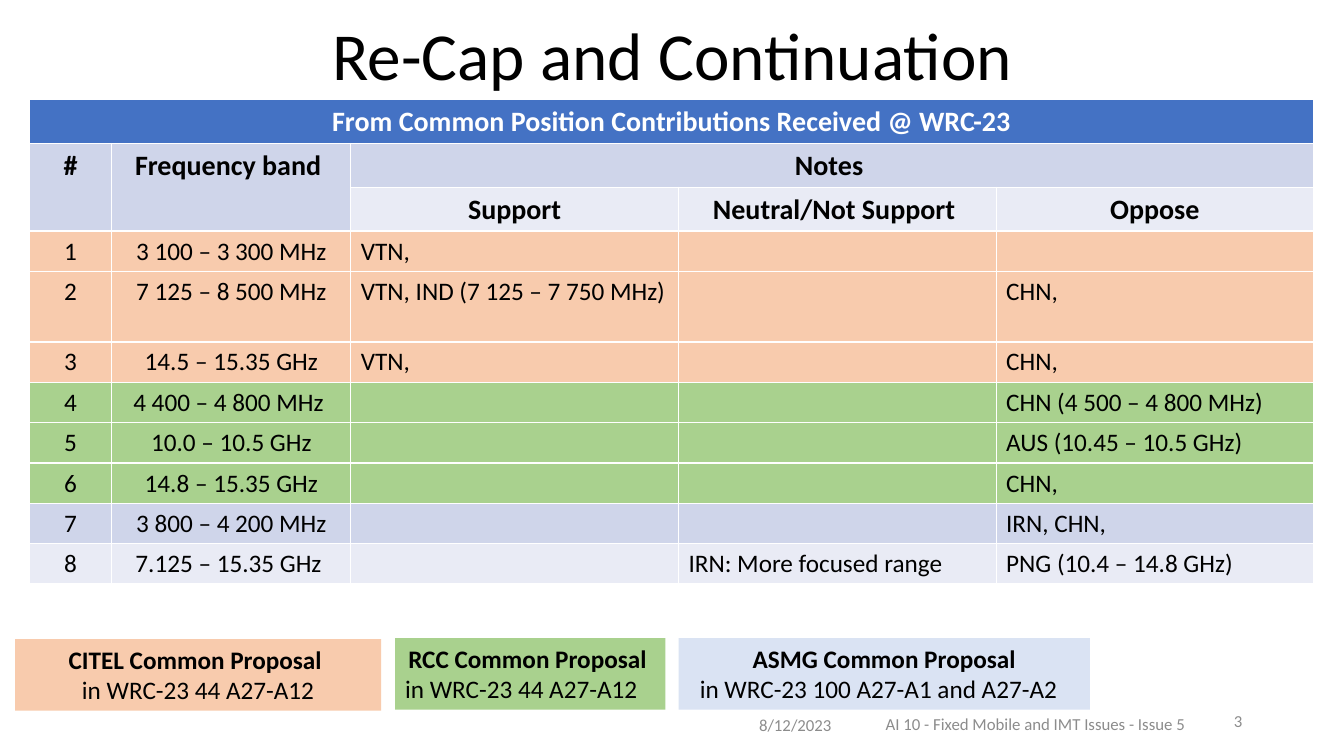
from pptx import Presentation
from pptx.dml.color import RGBColor
from pptx.enum.shapes import MSO_SHAPE
from pptx.enum.text import MSO_ANCHOR, MSO_AUTO_SIZE, PP_ALIGN
from pptx.util import Emu, Pt

RECT = MSO_SHAPE.RECTANGLE
TOP, MIDDLE = MSO_ANCHOR.TOP, MSO_ANCHOR.MIDDLE
LEFT, CENTER, RIGHT = PP_ALIGN.LEFT, PP_ALIGN.CENTER, PP_ALIGN.RIGHT
NO_FIT = MSO_AUTO_SIZE.NONE

BLACK = RGBColor(0x00, 0x00, 0x00)
WHITE = RGBColor(0xFF, 0xFF, 0xFF)
GRAY = RGBColor(0x8C, 0x8C, 0x8C)
BLUE = RGBColor(0x44, 0x72, 0xC4)
BAND_DARK = RGBColor(0xCF, 0xD5, 0xEA)
BAND_LIGHT = RGBColor(0xE9, 0xEB, 0xF5)
ORANGE = RGBColor(0xF8, 0xCB, 0xAD)
GREEN = RGBColor(0xA9, 0xD1, 0x8E)
PALE_BLUE = RGBColor(0xDA, 0xE3, 0xF3)

FONT = "Calibri"
COL_WIDTHS = [82, 237, 325, 315, 315]
ROW_HEIGHTS = [43, 43, 43, 40, 70] + [40] * 6

HEADERS = [
    (BLUE, ["From Common Position Contributions Received @ WRC-23", "", "", "", ""]),
    (BAND_DARK, ["#", "Frequency band ", "Notes ", "", ""]),
    (BAND_LIGHT, ["", "", "Support", "Neutral/Not Support ", "Oppose"]),
]
# Fill, frequency band, support, neutral, oppose
BANDS = [
    (ORANGE, "3 100 – 3 300 MHz", "VTN,", "", ""),
    (ORANGE, "7 125 – 8 500 MHz", "VTN, IND (7 125 – 7 750 MHz)", "", "CHN,"),
    (ORANGE, "14.5 – 15.35 GHz", "VTN,", "", "CHN,"),
    (GREEN, "4 400 – 4 800 MHz ", "", "", "CHN (4 500 – 4 800 MHz)"),
    (GREEN, "10.0 – 10.5 GHz", "", "", "AUS (10.45 – 10.5 GHz)"),
    (GREEN, "14.8 – 15.35 GHz", "", "", "CHN,"),
    (BAND_DARK, "3 800 – 4 200 MHz", "", "", "IRN, CHN,"),
    (BAND_LIGHT, "7.125 – 15.35 GHz ", "", "IRN: More focused range", "PNG (10.4 – 14.8 GHz)"),
]
# Left, top, width, fill, heading, source, source alignment
PROPOSALS = [
    (15, 634, 363, ORANGE, "CITEL Common Proposal ", "in WRC-23 44 A27-A12", CENTER),
    (392, 633, 268, GREEN, "RCC Common Proposal ", "in WRC-23 44 A27-A12", LEFT),
    (673, 633, 408, PALE_BLUE, "ASMG Common Proposal",
     "in WRC-23 100 A27-A1 and A27-A2  ", CENTER),
]
# Left, top, width, text, alignment
FOOTERS = [
    (743, 699, 300, "8/12/2023", LEFT),
    (804, 698, 450, "AI 10 - Fixed Mobile and IMT Issues - Issue 5 ", CENTER),
    (942, 695, 300, "3", RIGHT),
]


def px(n):
    """Convert px, 100 to the inch, to EMU."""
    return Emu(n * 9144)


def format_paragraph(p, text, size, color, align, bold=False):
    p.text = text
    p.alignment = align
    p.font.name = FONT
    p.font.size = Pt(size)
    p.font.bold = bold
    p.font.color.rgb = color


def set_title(s, text):
    title = s.shapes.title
    title.left, title.top, title.width, title.height = px(15), px(8), px(1304), px(91)
    tf = title.text_frame
    tf.auto_size = NO_FIT
    tf.vertical_anchor = TOP
    format_paragraph(tf.paragraphs[0], text, 48, BLACK, CENTER)


def fill_cell(cell, text, fill, size, color, align, bold):
    cell.fill.solid()
    cell.fill.fore_color.rgb = fill
    format_paragraph(cell.text_frame.paragraphs[0], text, size, color, align, bold)


def add_band_table(s):
    frame = s.shapes.add_table(len(ROW_HEIGHTS), len(COL_WIDTHS), px(29), px(99),
                               px(sum(COL_WIDTHS)), px(sum(ROW_HEIGHTS)))
    table = frame.table
    table.horz_banding = False
    for column, width in zip(table.columns, COL_WIDTHS):
        column.width = px(width)
    for row, height in zip(table.rows, ROW_HEIGHTS):
        row.height = px(height)

    for r, (fill, texts) in enumerate(HEADERS):
        color = BLACK if r else WHITE
        for c, text in enumerate(texts):
            fill_cell(table.cell(r, c), text, fill, 20, color, CENTER, True)
    for number, (fill, *texts) in enumerate(BANDS, 1):
        for c, text in enumerate([str(number), *texts]):
            align = CENTER if c < 2 else LEFT
            cell = table.cell(len(HEADERS) + number - 1, c)
            fill_cell(cell, text, fill, 18, BLACK, align, False)

    for first, last in [((0, 0), (0, 4)), ((1, 0), (2, 0)),
                        ((1, 1), (2, 1)), ((1, 2), (1, 4))]:
        table.cell(*first).merge(table.cell(*last))


def add_proposal(s, left, top, width, fill, heading, source, align):
    box = s.shapes.add_shape(RECT, px(left), px(top), px(width), px(71))
    box.shadow.inherit = False
    box.fill.solid()
    box.fill.fore_color.rgb = fill
    box.line.fill.background()
    tf = box.text_frame
    tf.word_wrap = True
    tf.vertical_anchor = TOP
    format_paragraph(tf.paragraphs[0], heading, 18, BLACK, CENTER, True)
    format_paragraph(tf.add_paragraph(), source, 18, BLACK, align)


def add_footer(s, left, top, width, text, align):
    tf = s.shapes.add_textbox(px(left), px(top), px(width), px(40)).text_frame
    tf.word_wrap = True
    tf.vertical_anchor = MIDDLE
    format_paragraph(tf.paragraphs[0], text, 12, GRAY, align)


def main():
    prs = Presentation()
    prs.slide_width, prs.slide_height = px(1333), px(750)
    s = prs.slides.add_slide(prs.slide_layouts[5])
    for footer in FOOTERS:
        add_footer(s, *footer)
    set_title(s, "Re-Cap and Continuation")
    add_band_table(s)
    for proposal in PROPOSALS:
        add_proposal(s, *proposal)
    prs.save("out.pptx")


if __name__ == "__main__":
    main()
